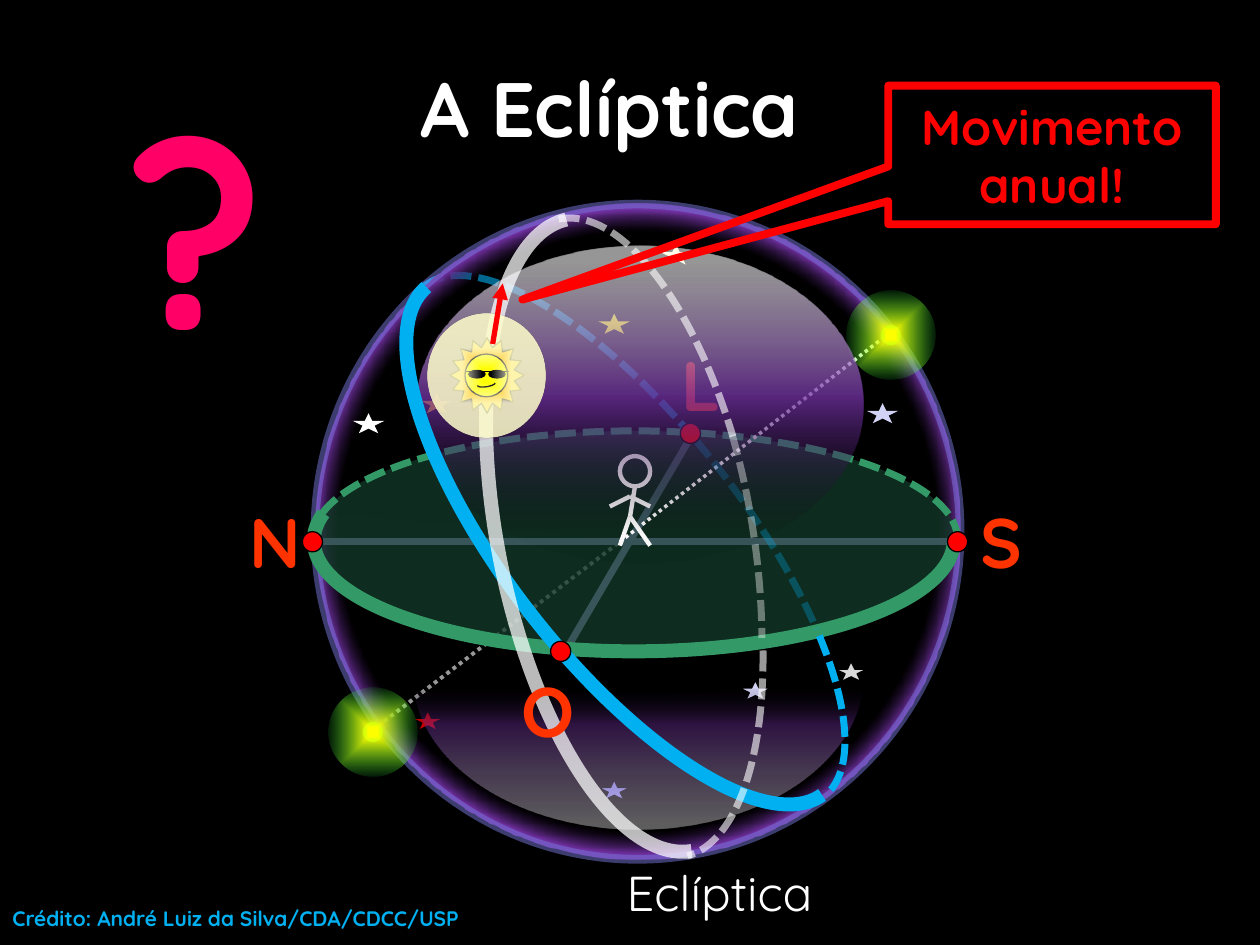
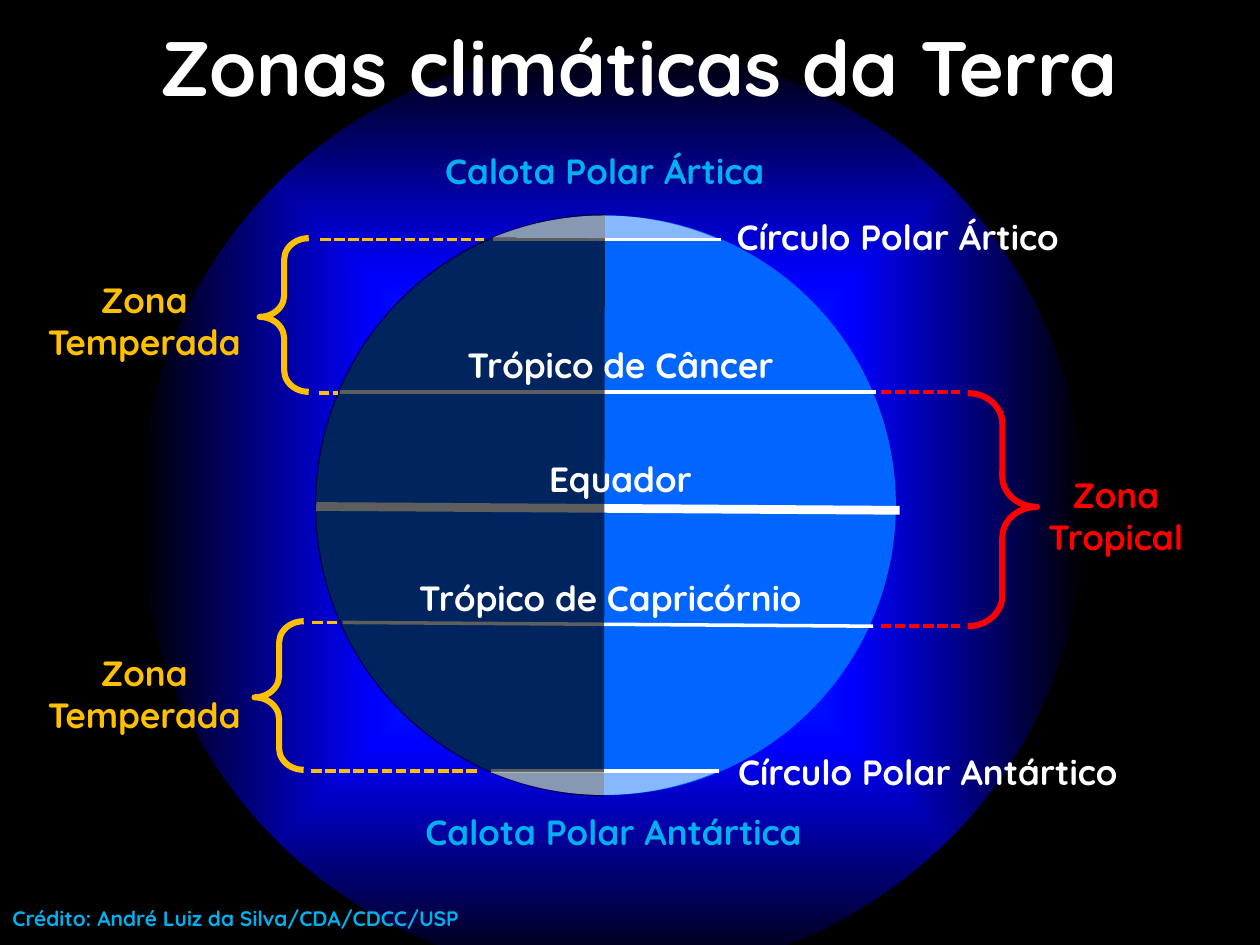
from math import cos, pi, sin

from lxml.etree import SubElement
from pptx import Presentation
from pptx.dml.color import RGBColor
from pptx.enum.dml import MSO_LINE as DASH
from pptx.enum.shapes import MSO_CONNECTOR, MSO_SHAPE as MSO
from pptx.enum.text import MSO_ANCHOR, MSO_AUTO_SIZE, PP_ALIGN
from pptx.oxml.ns import qn
from pptx.util import Inches, Pt

FONT = "Quicksand"
C = {
    "black": "000000", "white": "FFFFFF", "sky": "00B0F0", "purple": "7030A0",
    "rim": "7878DE", "axis": "A5A5E9", "ground": "143C2B", "horizon": "339966",
    "cardinal": "FF3300", "red": "FF0000", "pink": "FF0066", "gold": "FFC000",
    "yellow": "FFFF00", "cream": "FFFFCC", "green": "21FF46", "crimson": "C00000",
    "lilac": "D2D2F4", "violet": "8585E0", "silver": "D9D9D9",
    "ocean": "0066FF", "blue": "0000FF",
}
LINE = MSO_CONNECTOR.STRAIGHT
OUTLINE = ("black", 0.75)
STAR_GLOW = {"path": "shape", "stops": [(7, "yellow", 100), (77, "green", 2)]}
SUN_GLOW = {"path": "shape", "stops": [(7, "white", 0), (42, "cream", 85), (100, "cream", 2)]}
SPHERE = {"path": "circle", "stops": [(65, "black", 40), (70, "purple", 100)]}
SKY_TOP = {"angle": 90, "stops": [(6, "white", 58), (48, "purple", 77), (91, "black", 2)]}
SKY_BOTTOM = {"angle": 0, "stops": [(3, "white", 37), (68, "purple", 41), (94, "black", 0)]}
SPACE = {"path": "shape", "stops": [(0, "ocean", 100), (50, "blue", 100), (100, "black", 100)]}


def draw(target, kind, box, fill=None, line=None, turn=0, adjust=()):
    if kind is LINE:
        item = target.add_connector(kind, *map(Inches, box))
    elif kind is None:
        item = box
    else:
        item = target.add_shape(kind, *map(Inches, box))
        item.rotation = turn
        for index, value in enumerate(adjust):
            item.adjustments[index] = value
    properties = item.element.spPr
    if isinstance(fill, dict):
        item.fill.gradient()
        gradient = properties.find(qn("a:gradFill"))
        gradient.set("rotWithShape", "1")
        for child in list(gradient):
            gradient.remove(child)
        stops = SubElement(gradient, qn("a:gsLst"))
        for position, colour, opacity in fill["stops"]:
            stop = SubElement(stops, qn("a:gs"), pos=str(position * 1000))
            tint = SubElement(stop, qn("a:srgbClr"), val=C[colour])
            SubElement(tint, qn("a:alpha"), val=str(opacity * 1000))
        if "path" in fill:
            shade = SubElement(gradient, qn("a:path"), attrib={"path": fill["path"]})
            SubElement(shade, qn("a:fillToRect"), l="50000", t="50000", r="50000", b="50000")
        else:
            SubElement(gradient, qn("a:lin"), ang=str(fill["angle"] * 60000), scaled="0")
    elif fill:
        colour, opacity = fill if isinstance(fill, tuple) else (fill, 100)
        item.fill.solid()
        item.fill.fore_color.rgb = RGBColor.from_string(C[colour])
        if opacity < 100:
            tint = properties.find(qn("a:solidFill"))[0]
            SubElement(tint, qn("a:alpha"), val=str(opacity * 1000))
    elif kind is not LINE:
        item.fill.background()
    if line:
        colour, width, dash, opacity = (*line, *(None, 100)[len(line) - 2:])
        item.line.color.rgb = RGBColor.from_string(C[colour])
        item.line.width = Pt(width)
        if dash:
            item.line.dash_style = dash
        if opacity < 100:
            tint = properties.find(qn("a:ln")).find(qn("a:solidFill"))[0]
            SubElement(tint, qn("a:alpha"), val=str(opacity * 1000))
    else:
        item.line.fill.background()
    if kind is LINE:
        SubElement(properties, qn("a:effectLst"))
    else:
        item.shadow.inherit = False
    return item


def write(holder, text, size, colour, align=PP_ALIGN.CENTER, bold=True, grow=True):
    frame = holder.text_frame
    frame.word_wrap = True
    if grow:
        frame.auto_size = MSO_AUTO_SIZE.SHAPE_TO_FIT_TEXT
    paragraph = frame.paragraphs[0]
    paragraph.alignment = align
    run = paragraph.add_run()
    run.text = text
    run.font.name = FONT
    run.font.size = Pt(size)
    run.font.bold = bold
    run.font.color.rgb = RGBColor.from_string(C[colour])


deck = Presentation()
deck.slide_width, deck.slide_height = Inches(10), Inches(7.5)
pages = []
for heading, box in [
    ("A Eclíptica", (0.59, 0.22, 8.5, 1.25)),
    ("Zonas climáticas da Terra", (0.51, -0.03, 9.13, 1.1)),
]:
    page = deck.slides.add_slide(deck.slide_layouts[5])
    page.background.fill.solid()
    page.background.fill.fore_color.rgb = RGBColor.from_string(C["black"])
    title = page.shapes.title
    title.left, title.top, title.width, title.height = map(Inches, box)
    title.text_frame.vertical_anchor = MSO_ANCHOR.MIDDLE
    write(title, heading, 44, "white", grow=False)
    pages.append(page.shapes)
ecliptic, zones = pages

write(ecliptic.add_textbox(*map(Inches, (3.82, 6.8, 3.78, 0.57))), "Eclíptica", 28, "white", bold=False)
draw(ecliptic, MSO.ARC, (3.99, 1.73, 1.9, 5.11), None, ("sky", 4, DASH.SQUARE_DOT), 142.1, (54, 94.77))
draw(ecliptic, LINE, (2.95, 5.8, 4.92, 4.3), None, ("white", 2.25, DASH.ROUND_DOT))

sphere = ecliptic.add_group_shape().shapes
draw(sphere, MSO.OVAL, (2.5, 1.62, 5.12, 5.2), SPHERE, ("rim", 5, None, 50))
for axis in [(4.48, 5.18, 5.5, 3.44), (2.5, 4.3, 7.62, 4.3)]:
    draw(sphere, LINE, axis, None, ("axis", 4))
draw(sphere, MSO.OVAL, (2.48, 3.42, 5.12, 1.73), ("ground", 73), ("horizon", 4, DASH.SQUARE_DOT))
for cardinal, left, top in [("N", 1.88, 3.91), ("L", 5.31, 2.66), ("S", 7.68, 3.91)]:
    write(sphere.add_textbox(*map(Inches, (left, top, 0.39, 0.77))), cardinal, 40, "cardinal", PP_ALIGN.LEFT)

draw(ecliptic, MSO.ARC, (2.49, 3.41, 5.08, 1.76), ("ground", 7), ("horizon", 8), 0, (0, 111))
draw(ecliptic, LINE, (4.92, 4.3, 7.05, 2.65), None, ("white", 2, DASH.ROUND_DOT))
draw(ecliptic, MSO.ARC, (4.03, 1.75, 1.88, 5.11), None, ("sky", 4, DASH.SQUARE_DOT, 30), 142.1, (97.33, 145.46))

observer = ecliptic.add_group_shape().shapes
draw(observer, MSO.OVAL, (4.92, 3.62, 0.24, 0.24), None, ("white", 2.5))
for limb in [
    (5.04, 3.86, 5, 4.1), (5, 4.1, 5.16, 4.33), (5, 4.1, 4.92, 4.33),
    (5, 3.94, 5.16, 4.02), (4.84, 4.02, 5, 3.94),
]:
    draw(observer, LINE, limb, None, ("white", 2.5))

stars = ecliptic.add_group_shape().shapes
for left, top, colour, edge in [
    (5.87, 5.4, "lilac", OUTLINE), (3.27, 5.64, "crimson", OUTLINE),
    (4.75, 6.19, "violet", OUTLINE), (6.63, 5.25, "silver", OUTLINE),
    (6.88, 3.2, "lilac", None), (3.34, 3.12, "gold", None), (2.8, 3.28, "white", None),
    (4.75, 2.49, "yellow", None), (5.24, 1.94, "cream", None),
]:
    draw(stars, MSO.STAR_5_POINT, (left, top, 0.25, 0.16), colour, edge)

for left, top in [(5.4, 3.36), (2.4, 4.22), (7.52, 4.22)]:
    draw(ecliptic, MSO.OVAL, (left, top, 0.16, 0.16), "red", OUTLINE)
draw(ecliptic, MSO.MOON, (4.45, 4.18, 1.23, 3.58), SKY_BOTTOM, None, 270, (0.875,))
for left, top in [(6.72, 2.31), (2.61, 5.46)]:
    pole = ecliptic.add_group_shape().shapes
    draw(pole, MSO.OVAL, (left + 0.27, top + 0.27, 0.16, 0.16), "green", None, 305.7)
    draw(pole, MSO.OVAL, (left, top, 0.7, 0.7), STAR_GLOW, None, 305.7)

draw(ecliptic, MSO.ARC, (4.03, 1.75, 1.88, 5.11), None, ("sky", 4, DASH.SQUARE_DOT), 142.1, (146.21, 161.53))
draw(ecliptic, MSO.OVAL, (3.31, 1.95, 3.54, 2.52), SKY_TOP)
draw(ecliptic, MSO.ARC, (4.01, 1.73, 1.91, 5.11), None, ("sky", 8), 142.1, (162.18, 53.8))
draw(ecliptic, MSO.OVAL, (4.37, 5.09, 0.16, 0.16), "red", OUTLINE)
for box, turn, adjust, stroke in [
    ((3.9, 1.7, 2.07, 5.11), 170, (88.48, 135.59), (4, DASH.SQUARE_DOT, 38)),
    ((3.89, 1.74, 2.07, 5.11), 168.8, (137.23, 161.53), (4, DASH.SQUARE_DOT, 60)),
    ((3.88, 1.69, 2.1, 5.11), 168.8, (54, 89.88), (4, DASH.SQUARE_DOT, 60)),
    ((3.95, 1.69, 2.11, 5.11), 168.8, (162.18, 53.8), (8, None, 72)),
]:
    draw(ecliptic, MSO.ARC, box, None, ("white", *stroke), turn, adjust)

sun = ecliptic.add_group_shape().shapes
draw(sun, MSO.STAR_16_POINT, (3.57, 2.68, 0.59, 0.6), "gold", OUTLINE)
draw(sun, MSO.OVAL, (3.69, 2.81, 0.34, 0.34), "yellow", OUTLINE)
smile = [(3.86 + 0.07 * cos(pi * k / 8), 3.05 + 0.02 * sin(pi * k / 8) - 0.01 * cos(pi * k / 8)) for k in range(9)]
pen = sun.build_freeform(Inches(smile[0][0]), Inches(smile[0][1]))
pen.add_line_segments([(Inches(x), Inches(y)) for x, y in smile[1:]], close=False)
draw(sun, None, pen.convert_to_shape(), None, OUTLINE)
for left in (3.72, 3.88):
    draw(sun, MSO.OVAL, (left, 2.94, 0.13, 0.06), "black", OUTLINE)
draw(sun, LINE, (3.69, 2.95, 4.04, 2.95), None, OUTLINE)
draw(sun, MSO.OVAL, (3.39, 2.49, 0.94, 0.98), SUN_GLOW)

write(ecliptic.add_textbox(*map(Inches, (4.04, 5.25, 0.39, 0.77))), "O", 40, "cardinal", PP_ALIGN.LEFT)
motion = draw(ecliptic, LINE, (3.91, 2.73, 3.99, 2.25), None, ("red", 3))
SubElement(motion.element.spPr.find(qn("a:ln")), qn("a:tailEnd"), type="triangle")
callout = draw(ecliptic, MSO.RECTANGULAR_CALLOUT, (7.05, 0.68, 2.6, 1.1), None, ("red", 4.5), 0, (-1.617, 1.044))
write(callout, "Movimento anual!", 28, "red", grow=False)
write(ecliptic.add_textbox(*map(Inches, (0.91, 0.49, 1.26, 2.63))), "?", 150, "pink")

draw(zones, MSO.OVAL, (1.11, 0.37, 7.5, 7.39), SPACE)
draw(zones, MSO.OVAL, (2.51, 1.71, 4.6, 4.6), "ocean", None, 47.7)
for parallel, width in [
    ((2.51, 4.02, 7.14, 4.05), 5), ((2.7, 3.11, 6.95, 3.11), 2), ((2.72, 4.94, 6.93, 4.97), 2),
    ((3.91, 1.9, 5.72, 1.9), 2), ((3.9, 6.12, 5.71, 6.12), 2),
]:
    draw(zones, LINE, parallel, None, ("white", width))
draw(zones, MSO.CHORD, (2.5, 1.7, 4.6, 4.62), ("black", 63), None, 0, (54.09, 162.02))

for box, colour, turn in [
    ((7.68, 3.12, 0.55, 1.85), "red", 0),
    ((2.06, 1.89, 0.39, 1.22), "gold", 180),
    ((2.02, 4.93, 0.39, 1.18), "gold", 180),
]:
    draw(zones, MSO.RIGHT_BRACE, box, None, (colour, 3.5), turn, (0.438, 0.488))
for start, end, height, colour in [
    (2.54, 3.84, 1.9, "gold"), (2.47, 3.81, 6.12, "gold"), (2.53, 2.68, 3.12, "gold"),
    (2.48, 2.68, 4.94, "gold"), (6.99, 7.62, 4.97, "red"), (6.99, 7.62, 3.11, "red"),
]:
    draw(zones, LINE, (start, height, end, height), None, (colour, 2, DASH.SQUARE_DOT))
for turn, start in [(0, 40.23), (180, 40.46)]:
    draw(zones, MSO.CHORD, (2.49, 1.71, 4.6, 4.6), ("white", 53), None, turn, (start, 67.78))

for text, box, colour in [
    ("Trópico de Câncer", (2.64, 2.68, 4.57, 0.44), "white"),
    ("Trópico de Capricórnio", (2.56, 4.53, 4.57, 0.44), "white"),
    ("Equador", (2.64, 3.58, 4.57, 0.44), "white"),
    ("Círculo Polar Ártico", (4.84, 1.66, 4.57, 0.44), "white"),
    ("Círculo Polar Antártico", (5.08, 5.91, 4.57, 0.44), "white"),
    ("Zona Tropical", (7.91, 3.71, 1.89, 0.77), "red"),
    ("Zona Temperada", (0.2, 2.16, 1.89, 0.77), "gold"),
    ("Zona Temperada", (0.2, 5.12, 1.89, 0.77), "gold"),
    ("Calota Polar Antártica", (3.1, 6.38, 3.54, 0.44), "sky"),
    ("Calota Polar Ártica", (3.03, 1.14, 3.54, 0.44), "sky"),
]:
    write(zones.add_textbox(*map(Inches, box)), text, 20, colour)
zones.title.element.getparent().append(zones.title.element)

for page in pages:
    credit = page.add_textbox(*map(Inches, (0, 7.14, 10.28, 0.3)))
    write(credit, "Crédito: André Luiz da Silva/CDA/CDCC/USP", 12, "sky", PP_ALIGN.LEFT)

deck.save("out.pptx")
